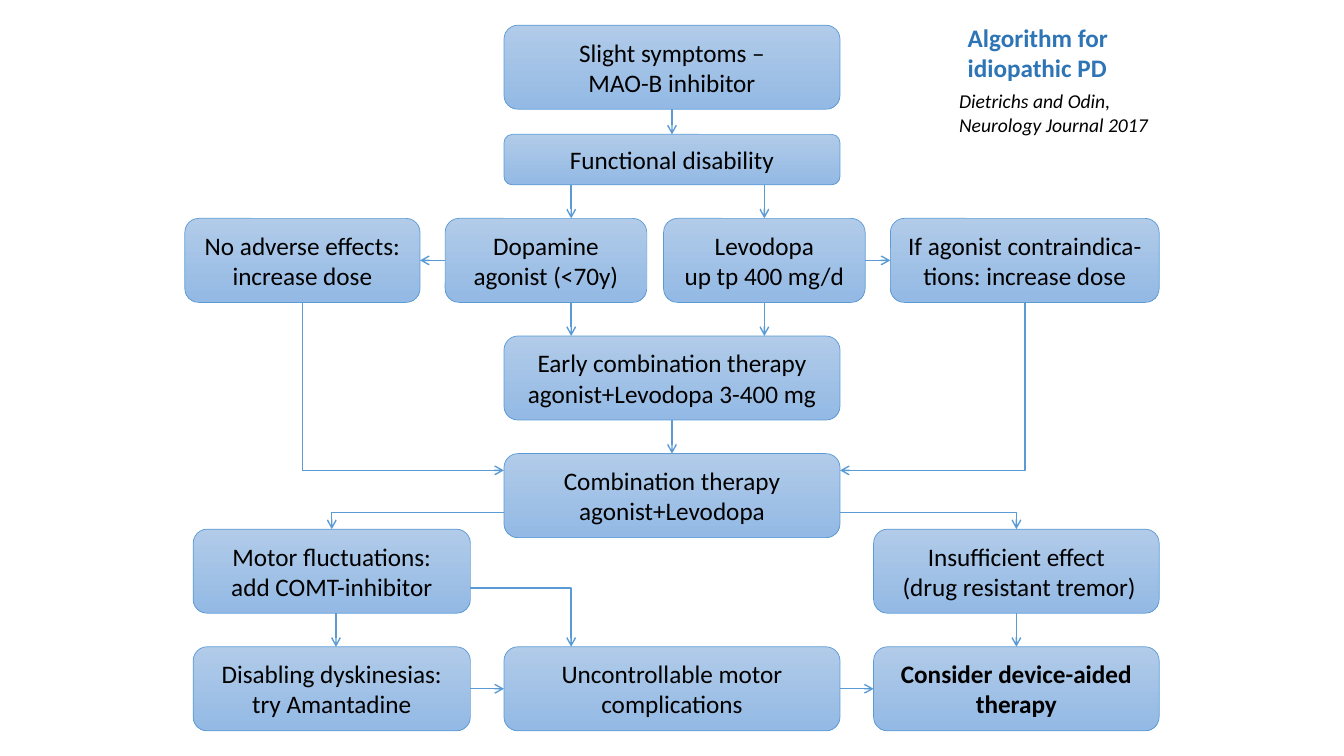
from dataclasses import dataclass

from lxml.etree import SubElement
from pptx import Presentation
from pptx.dml.color import RGBColor
from pptx.enum.shapes import MSO_CONNECTOR as CONN, MSO_SHAPE as SHAPE
from pptx.enum.text import MSO_ANCHOR as ANCHOR, MSO_AUTO_SIZE as AUTO, PP_ALIGN as ALIGN
from pptx.oxml.ns import qn
from pptx.util import Pt


@dataclass(frozen=True)
class Theme:
    font: str = "Calibri"
    text: RGBColor = RGBColor(0, 0, 0)
    title: RGBColor = RGBColor(0x2E, 0x75, 0xB6)
    line: RGBColor = RGBColor(0x5B, 0x9B, 0xD5)
    fill_top: RGBColor = RGBColor(0xB1, 0xCB, 0xE9)
    fill_bottom: RGBColor = RGBColor(0x93, 0xB9, 0xE4)
    size: int = 18
    small: int = 14
    border: float = 0.5
    arrow: float = 1


THEME = Theme()
BOX_H = 60

# Columns as (left, width)
CENTRE = (360, 240)
LEFT = (138, 198)
RIGHT = (624, 204)

# Boxes: column, top, height, lines, bold
BOXES = [
    (CENTRE, 18, BOX_H, ["Slight symptoms –", "MAO-B inhibitor"], False),
    (CENTRE, 96, 36, ["Functional disability"], False),
    ((318, 144), 156, BOX_H, ["Dopamine agonist (<70y)"], False),
    ((132, 168), 156, BOX_H, ["No adverse effects:", "increase dose"], False),
    ((474, 144), 156, BOX_H, ["Levodopa", "up tp 400 mg/d"], False),
    ((636, 192), 156, BOX_H, ["If agonist contraindica-tions: increase dose"], False),
    (CENTRE, 240, BOX_H, ["Early combination therapy", "agonist+Levodopa 3-400 mg"], False),
    (CENTRE, 324, BOX_H, ["Combination therapy", "agonist+Levodopa"], False),
    (LEFT, 378, BOX_H, ["Motor fluctuations:", "add COMT-inhibitor"], False),
    (LEFT, 462, BOX_H, ["Disabling dyskinesias:", "try Amantadine"], False),
    (CENTRE, 462, BOX_H, ["Uncontrollable motor complications"], False),
    (RIGHT, 378, BOX_H, ["Insufficient effect", " (drug resistant tremor)"], False),
    (RIGHT, 462, BOX_H, ["Consider device-aided therapy"], True),
]

# Straight arrows: vertical (x, from y, to y) and horizontal (y, from x, to x)
DOWN = [
    (480, 78, 96), (408, 132, 156), (546, 132, 156), (408, 216, 240),
    (546, 216, 240), (480, 300, 324), (240, 438, 462), (726, 438, 462),
]
ACROSS = [(186, 318, 300), (186, 618, 636), (492, 336, 360), (492, 600, 624)]

# Elbows run horizontally, then vertically: start, end, which end has the arrowhead
ELBOWS = [
    (360, 336, 216, 216, "headEnd"),
    (600, 336, 732, 216, "headEnd"),
    (600, 366, 726, 378, "tailEnd"),
    (360, 366, 237, 378, "tailEnd"),
    (336, 420, 408, 462, "tailEnd"),
]


def write_lines(tf, lines, size, color, align, bold=False, italic=False):
    tf.word_wrap = True
    tf.auto_size = AUTO.NONE
    for i, line in enumerate(lines):
        p = tf.add_paragraph() if i else tf.paragraphs[0]
        p.alignment = align
        r = p.add_run()
        r.text = line
        font = r.font
        font.name, font.size, font.color.rgb = THEME.font, Pt(size), color
        font.bold, font.italic = bold, italic


def add_title(s, lines):
    sp = s.shapes.title
    sp.left, sp.top, sp.width, sp.height = Pt(684), Pt(12), Pt(120), Pt(51)
    sp.text_frame.vertical_anchor = ANCHOR.TOP
    write_lines(sp.text_frame, lines, THEME.size, THEME.title, ALIGN.LEFT, bold=True)


def add_citation(s, lines):
    sp = s.shapes.add_textbox(Pt(678), Pt(60), Pt(162), Pt(41))
    write_lines(sp.text_frame, lines, THEME.small, THEME.text, ALIGN.LEFT, italic=True)


def add_box(s, column, top, height, lines, bold):
    left, width = column
    sp = s.shapes.add_shape(SHAPE.ROUNDED_RECTANGLE, Pt(left), Pt(top), Pt(width), Pt(height))
    sp.shadow.inherit = False
    sp.fill.gradient()
    sp.fill.gradient_angle = 270
    for stop, color in zip(sp.fill.gradient_stops, (THEME.fill_top, THEME.fill_bottom)):
        stop.color.rgb = color
    sp.line.color.rgb = THEME.line
    sp.line.width = Pt(THEME.border)
    sp.text_frame.vertical_anchor = ANCHOR.MIDDLE
    write_lines(sp.text_frame, lines, THEME.size, THEME.text, ALIGN.CENTER, bold=bold)


def add_arrow(s, x1, y1, x2, y2, tip="tailEnd", kind=CONN.STRAIGHT):
    c = s.shapes.add_connector(kind, Pt(x1), Pt(y1), Pt(x2), Pt(y2))
    c.line.color.rgb = THEME.line
    c.line.width = Pt(THEME.arrow)
    sp_pr = c.element.spPr
    SubElement(sp_pr.find(qn("a:ln")), qn(f"a:{tip}"), type="arrow")
    SubElement(sp_pr, qn("a:effectLst"))
    return c


def add_elbow(s, x1, y1, x2, y2, tip):
    c = add_arrow(s, x1, y1, x2, y2, tip, CONN.ELBOW)
    # One bend instead of two
    c.element.spPr.find(qn("a:prstGeom")).set("prst", "bentConnector2")


def main():
    prs = Presentation()
    prs.slide_width, prs.slide_height = Pt(960), Pt(540)
    s = prs.slides.add_slide(prs.slide_layouts[5])

    # Heading and source
    add_title(s, ["Algorithm for", "idiopathic PD"])
    add_citation(s, ["Dietrichs and Odin,", "Neurology Journal 2017"])

    # Flowchart
    for box in BOXES:
        add_box(s, *box)
    for x, y1, y2 in DOWN:
        add_arrow(s, x, y1, x, y2)
    for y, x1, x2 in ACROSS:
        add_arrow(s, x1, y, x2, y)
    for elbow in ELBOWS:
        add_elbow(s, *elbow)

    prs.save("out.pptx")


if __name__ == "__main__":
    main()
